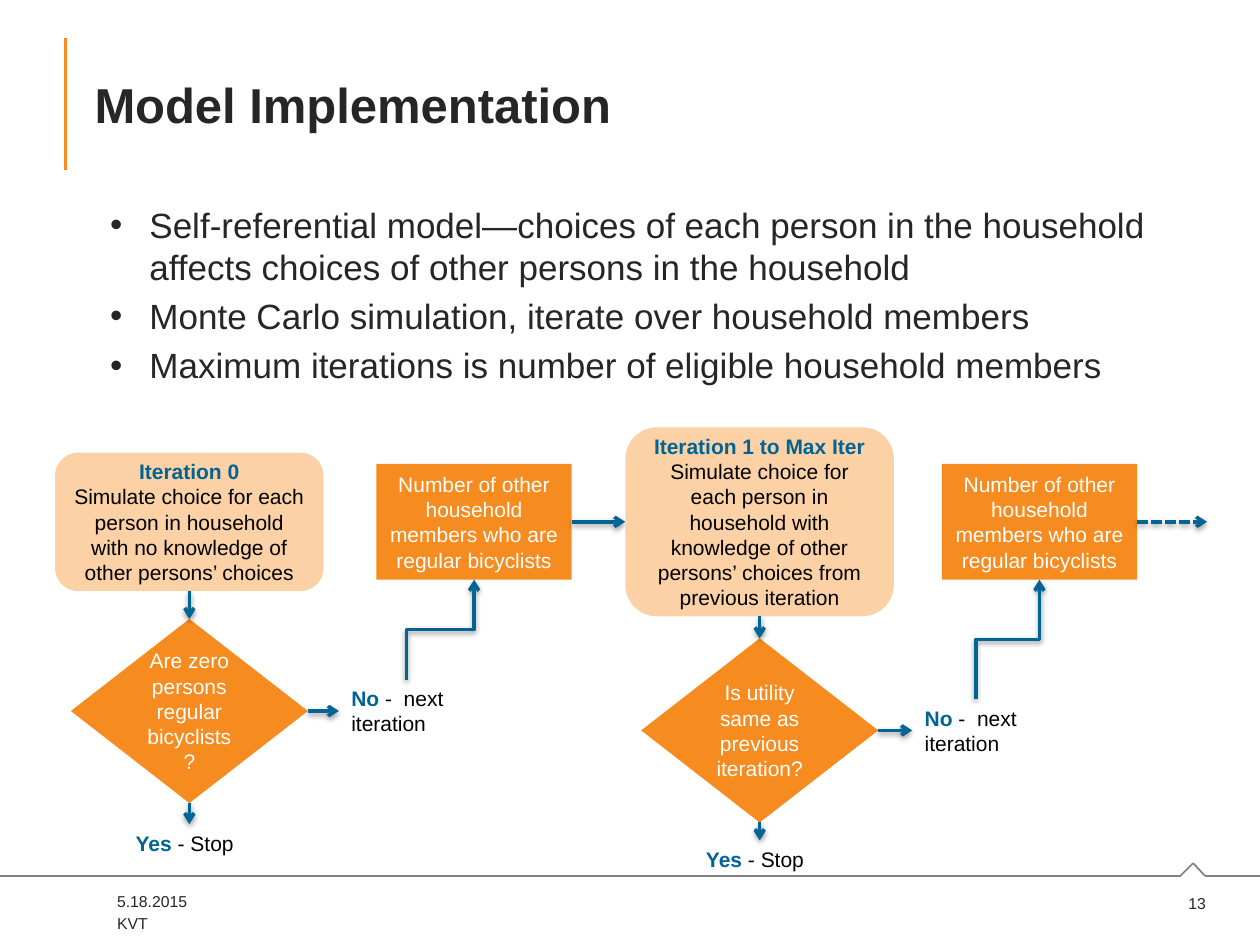
from itertools import pairwise

from lxml.etree import SubElement
from pptx import Presentation
from pptx.dml.color import RGBColor
from pptx.enum.dml import MSO_LINE
from pptx.enum.shapes import MSO_CONNECTOR, MSO_SHAPE
from pptx.enum.text import MSO_ANCHOR, MSO_AUTO_SIZE, PP_ALIGN
from pptx.oxml.ns import qn
from pptx.util import Pt

ORANGE, PEACH, BLUE = "F68B1F", "FBD1A5", "006494"
DARK, GRAY, BLACK, WHITE = "262626", "808080", "000000", "FFFFFF"


def rgb(color):
    return RGBColor.from_string(color)


def apply(target, formats):
    for name, value in formats.items():
        setattr(target, name, value)


class Deck:
    font = {"name": "Arial", "bold": False}
    frame = {"word_wrap": True, "auto_size": MSO_AUTO_SIZE.NONE}

    def __init__(self):
        self.prs = Presentation()
        apply(self.prs, {"slide_width": Pt(720), "slide_height": Pt(540)})
        self.s = self.prs.slides.add_slide(self.prs.slide_layouts[5])

    def set_text(self, tf, paragraphs, size, **formats):
        apply(tf, self.frame | formats.pop("frame", {}))
        for i, runs in enumerate(paragraphs):
            p = tf.add_paragraph() if i else tf.paragraphs[0]
            apply(p, {"alignment": PP_ALIGN.LEFT} | formats)
            for text, color, bold in runs:
                r = p.add_run()
                r.text = text
                apply(r.font, self.font | {"size": Pt(size), "bold": bold})
                r.font.color.rgb = rgb(color)

    def title(self, text, x, y, w, h):
        sp = self.s.shapes.title
        apply(sp, {"left": Pt(x), "top": Pt(y), "width": Pt(w), "height": Pt(h)})
        self.set_text(sp.text_frame, [[(text, DARK, True)]], 28,
                      frame={"vertical_anchor": MSO_ANCHOR.MIDDLE})

    def text(self, runs, x, y, w, h, size=12, **formats):
        sp = self.s.shapes.add_textbox(Pt(x), Pt(y), Pt(w), Pt(h))
        self.set_text(sp.text_frame, [runs], size,
                      frame={"auto_size": MSO_AUTO_SIZE.SHAPE_TO_FIT_TEXT}, **formats)

    def bullets(self, items, x, y, w, h):
        tf = self.s.shapes.add_textbox(Pt(x), Pt(y), Pt(w), Pt(h)).text_frame
        self.set_text(tf, [[(item, DARK, False)] for item in items], 20)
        for i, p in enumerate(tf.paragraphs):
            pPr = p._p.get_or_add_pPr()
            pPr.set("marL", str(Pt(31.5)))
            pPr.set("indent", str(-Pt(22.5)))
            if i:
                p.space_before = Pt(4)
            SubElement(pPr, qn("a:buFont"), typeface="Arial")
            SubElement(pPr, qn("a:buChar"), char="•")

    def shape(self, kind, paragraphs, cx, cy, w, h, fill):
        sp = self.s.shapes.add_shape(kind, Pt(cx - w / 2), Pt(cy - h / 2), Pt(w), Pt(h))
        sp.shadow.inherit = False
        sp.fill.solid()
        sp.fill.fore_color.rgb = rgb(fill)
        sp.line.fill.background()
        self.set_text(sp.text_frame, paragraphs, 12, alignment=PP_ALIGN.CENTER,
                      frame={"vertical_anchor": MSO_ANCHOR.MIDDLE})

    def line(self, start, end, color, width, kind=MSO_CONNECTOR.STRAIGHT):
        c = self.s.shapes.add_connector(kind, *map(Pt, start + end))
        c.line.width = Pt(width)
        c.line.color.rgb = rgb(color)
        return c, SubElement(c._element.spPr, qn("a:effectLst"))

    def arrow(self, start, end, kind=MSO_CONNECTOR.STRAIGHT, dash=None):
        c, effects = self.line(start, end, BLUE, 2, kind)
        if dash:
            c.line.dash_style = dash
        SubElement(c._element.spPr.find(qn("a:ln")), qn("a:tailEnd"), type="arrow")
        shadow = SubElement(effects, qn("a:outerShdw"), blurRad="40000",
                            dist="20000", dir="5400000", rotWithShape="0")
        tint = SubElement(shadow, qn("a:srgbClr"), val=BLACK)
        SubElement(tint, qn("a:alpha"), val="38000")
        return c

    def rising_elbow(self, start, end):
        (x1, y1), (x2, y2) = start, end
        cx, cy = (x1 + x2) / 2, (y1 + y2) / 2
        dx, dy = (y1 - y2) / 2, (x2 - x1) / 2
        c = self.arrow((cx + dx, cy + dy), (cx - dx, cy - dy), MSO_CONNECTOR.ELBOW)
        c._element.spPr.find(qn("a:xfrm")).set("rot", "5400000")

    def stage(self, heading, detail, question, cx, box_h, diamond_y, yes_y,
              no_x, no_w, count_x, exit_x, dash=None):
        mid, box_w, diamond_w, diamond_h = 298.2, 153.4, 135.4, 105.2
        count_w, count_h, no_h = 111.6, 66.2, 36
        top, bottom = diamond_y - diamond_h / 2, diamond_y + diamond_h / 2
        self.shape(MSO_SHAPE.ROUNDED_RECTANGLE,
                   [[(heading, BLUE, True)], [(detail, BLACK, False)]],
                   cx, mid, box_w, box_h, PEACH)
        self.shape(MSO_SHAPE.DIAMOND, [[(question, WHITE, False)]],
                   cx, diamond_y, diamond_w, diamond_h, ORANGE)
        self.shape(MSO_SHAPE.RECTANGLE,
                   [[("Number of other household members who are regular bicyclists",
                      WHITE, False)]], count_x, mid, count_w, count_h, ORANGE)
        self.text([("Yes", BLUE, True), (" - Stop", BLACK, False)],
                  cx - 37.8, yes_y, 75.6, 21.8)
        self.text([("No", BLUE, True), (" -  next iteration", BLACK, False)],
                  no_x, diamond_y - no_h / 2, no_w, no_h)
        self.arrow((cx, mid + box_h / 2), (cx, top))
        self.arrow((cx, bottom), (cx, yes_y))
        self.arrow((cx + diamond_w / 2, diamond_y), (no_x, diamond_y))
        self.rising_elbow((no_x + no_w / 2, diamond_y - no_h / 2),
                          (count_x, mid + count_h / 2))
        self.arrow((count_x + count_w / 2, mid), (exit_x, mid), dash=dash)


def main():
    deck = Deck()
    deck.line((37.5, 21.6), (37.5, 97.2), ORANGE, 1.5)
    rule = [(0, 500.4), (674.6, 500.4), (681.8, 493.2), (688.5, 500.4), (720, 500.4)]
    for start, end in pairwise(rule):
        deck.line(start, end, GRAY, 1)
    deck.text([("13", DARK, False)], 666, 507, 30.2, 18, 9, alignment=PP_ALIGN.RIGHT)
    deck.text([("5.18.2015", DARK, False)], 59.8, 506, 191.5, 18, 9)
    deck.text([("KVT", DARK, False)], 59.8, 518.5, 163.4, 18, 9)
    deck.title("Model Implementation", 46.8, 21.6, 637.2, 75.6)
    deck.bullets([
        "Self-referential model—choices of each person in the household "
        "affects choices of other persons in the household",
        "Monte Carlo simulation, iterate over household members",
        "Maximum iterations is number of eligible household members",
    ], 46.8, 113, 637.2, 133.2)
    deck.stage("Iteration 0",
               "Simulate choice for each person in household with no knowledge "
               "of other persons’ choices",
               "Are zero persons regular bicyclists?",
               cx=108.2, box_h=79, diamond_y=406.3, yes_y=470.9,
               no_x=193.7, no_w=77, count_x=270.9, exit_x=357.3)
    deck.stage("Iteration 1 to Max Iter",
               "Simulate choice for each person in household with knowledge "
               "of other persons’ choices from previous iteration",
               "Is utility same as previous iteration?",
               cx=434.1, box_h=108, diamond_y=417.4, yes_y=480.2,
               no_x=521.3, no_w=72.7, count_x=594, exit_x=689.8,
               dash=MSO_LINE.SQUARE_DOT)
    deck.prs.save("out.pptx")


if __name__ == "__main__":
    main()
